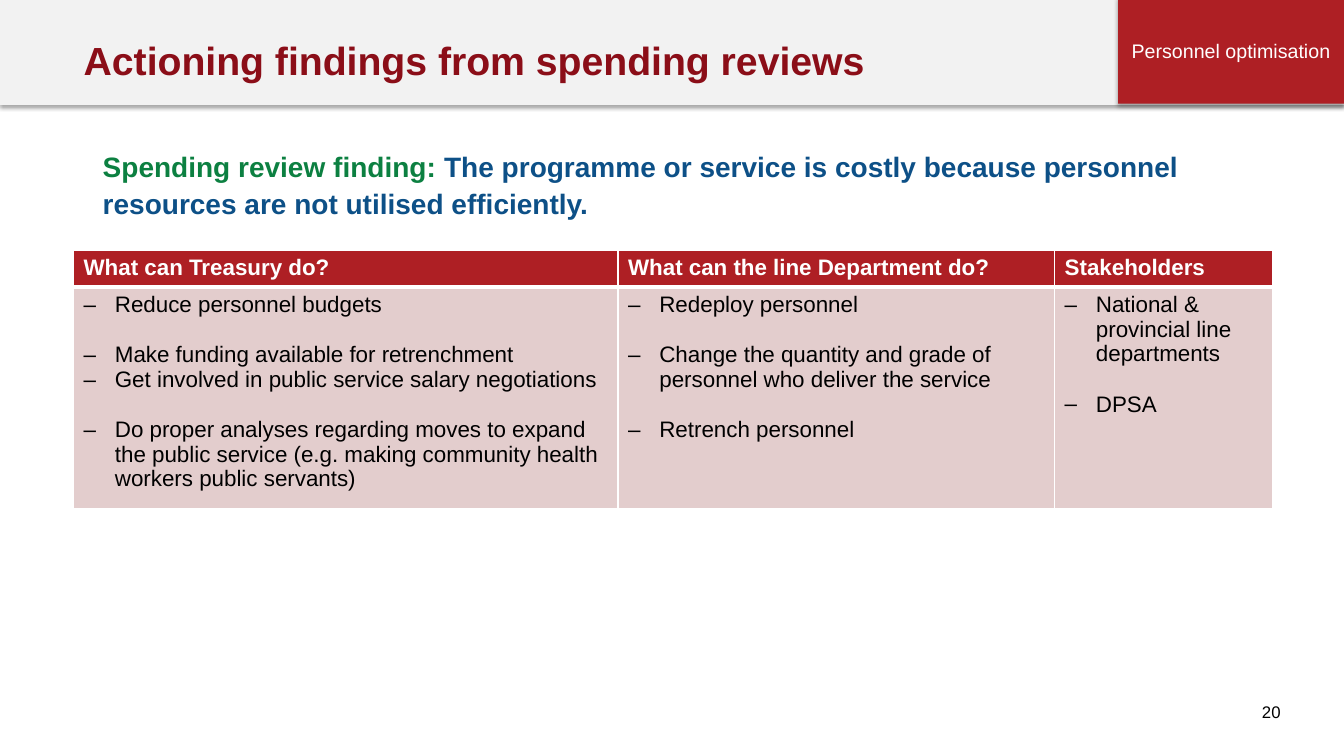
from dataclasses import dataclass

from lxml import etree
from pptx import Presentation
from pptx.dml.color import RGBColor
from pptx.enum.shapes import MSO_SHAPE
from pptx.enum.text import MSO_ANCHOR, PP_ALIGN
from pptx.oxml.ns import qn
from pptx.util import Inches, Pt

RECTANGLE = MSO_SHAPE.RECTANGLE
TOP, MIDDLE = MSO_ANCHOR.TOP, MSO_ANCHOR.MIDDLE
LEFT, CENTER, RIGHT = PP_ALIGN.LEFT, PP_ALIGN.CENTER, PP_ALIGN.RIGHT

WHITE = RGBColor(0xFF, 0xFF, 0xFF)
BLACK = RGBColor(0, 0, 0)
GREY = RGBColor(0xF2, 0xF2, 0xF2)
RED = RGBColor(0xAE, 0x1F, 0x24)
DARK_RED = RGBColor(0x8B, 0x0E, 0x18)
PINK = RGBColor(0xE3, 0xCD, 0xCD)
GREEN = RGBColor(0x0C, 0x80, 0x41)
BLUE = RGBColor(0x0D, 0x50, 0x87)

FONT = "Arial"
HEADER_HEIGHT, ACTIONS_HEIGHT = 0.33, 2.11
BULLET_INDENT = Inches(0.31)
BULLET_GAP = Pt(18)


@dataclass(frozen=True)
class Action:
    text: str
    gap_before: bool = True


@dataclass(frozen=True)
class ActionColumn:
    heading: str
    width: float
    actions: tuple[Action, ...]


COLUMNS = (
    ActionColumn("What can Treasury do?", 5.4, (
        Action("Reduce personnel budgets", False),
        Action("Make funding available for retrenchment"),
        Action("Get involved in public service salary negotiations", False),
        Action("Do proper analyses regarding moves to expand the public service "
               "(e.g. making community health workers public servants)"),
    )),
    ActionColumn("What can the line Department do?", 4.33, (
        Action("Redeploy personnel", False),
        Action("Change the quantity and grade of personnel who deliver the service"),
        Action("Retrench personnel"),
    )),
    ActionColumn("Stakeholders", 2.16, (
        Action("National & provincial line departments", False),
        Action("DPSA"),
    )),
)


def add_text(paragraph, text: str, *, size: float, color: RGBColor,
             bold: bool = False, align: PP_ALIGN = LEFT) -> None:
    paragraph.alignment = align
    run = paragraph.add_run()
    run.text = text
    run.font.name = FONT
    run.font.size = Pt(size)
    run.font.bold = bold
    run.font.color.rgb = color


def add_frame(slide, left: float, top: float, width: float, height: float):
    box = slide.shapes.add_textbox(Inches(left), Inches(top), Inches(width), Inches(height))
    box.text_frame.word_wrap = True
    return box.text_frame


def add_band(slide, left: float, top: float, width: float, height: float, color: RGBColor):
    """Add a flat rectangle with a soft shadow below it."""
    band = slide.shapes.add_shape(
        RECTANGLE, Inches(left), Inches(top), Inches(width), Inches(height))
    band.fill.solid()
    band.fill.fore_color.rgb = color
    band.line.fill.background()
    band.shadow.inherit = False
    effects = band.element.spPr.find(qn("a:effectLst"))
    shadow = etree.SubElement(effects, qn("a:outerShdw"), blurRad=str(Pt(3.1)),
                              dist=str(Pt(1.8)), dir="5400000", rotWithShape="0")
    shade = etree.SubElement(shadow, qn("a:srgbClr"), val=str(BLACK))
    etree.SubElement(shade, qn("a:alpha"), val="35000")
    return band


def style_cell(cell, color: RGBColor, bottom_width: float) -> None:
    """Give the cell white borders and a solid fill."""
    properties = cell._tc.get_or_add_tcPr()
    for side, width in (("L", 1), ("R", 1), ("T", 1), ("B", bottom_width)):
        border = etree.SubElement(properties, qn(f"a:ln{side}"), w=str(Pt(width)))
        fill = etree.SubElement(border, qn("a:solidFill"))
        etree.SubElement(fill, qn("a:srgbClr"), val=str(WHITE))
    cell.fill.solid()
    cell.fill.fore_color.rgb = color


def add_action(paragraph, action: Action) -> None:
    properties = paragraph._p.get_or_add_pPr()
    properties.set("marL", str(BULLET_INDENT))
    properties.set("indent", str(-BULLET_INDENT))
    paragraph.space_before = BULLET_GAP if action.gap_before else Pt(0)
    etree.SubElement(properties, qn("a:buFont"), typeface=FONT)
    etree.SubElement(properties, qn("a:buChar"), char="–")
    add_text(paragraph, action.text, size=16, color=BLACK)


def add_actions_table(slide) -> None:
    width = sum(column.width for column in COLUMNS)
    table = slide.shapes.add_table(
        2, len(COLUMNS), Inches(0.73), Inches(2.48), Inches(width),
        Inches(HEADER_HEIGHT + ACTIONS_HEIGHT)).table
    table.rows[0].height = Inches(HEADER_HEIGHT)
    table.rows[1].height = Inches(ACTIONS_HEIGHT)
    for index, column in enumerate(COLUMNS):
        table.columns[index].width = Inches(column.width)
        heading, body = table.cell(0, index), table.cell(1, index)
        style_cell(heading, RED, 3)
        style_cell(body, PINK, 1)
        add_text(heading.text_frame.paragraphs[0], column.heading,
                 size=16, color=WHITE, bold=True)
        for number, action in enumerate(column.actions):
            frame = body.text_frame
            paragraph = frame.add_paragraph() if number else frame.paragraphs[0]
            add_action(paragraph, action)


def add_header(slide) -> None:
    add_band(slide, 0, 0, 13.33, 1.04, GREY)
    topic = add_band(slide, 11.09, -0.03, 2.24, 1.06, RED)
    topic.text_frame.word_wrap = True
    topic.text_frame.vertical_anchor = MIDDLE
    add_text(topic.text_frame.paragraphs[0], "Personnel optimisation",
             size=14, color=WHITE, align=CENTER)

    title = slide.shapes.title
    topic.element.addnext(title.element)
    title.left, title.top = Inches(0.73), Inches(0.37)
    title.width, title.height = Inches(8.12), Inches(0.45)
    title.text_frame.vertical_anchor = MIDDLE
    add_text(title.text_frame.paragraphs[0], "Actioning findings from spending reviews",
             size=28, color=DARK_RED, bold=True)


def add_finding(slide) -> None:
    frame = add_frame(slide, 0.92, 1.4, 11.51, 0.85)
    frame.vertical_anchor = TOP
    finding = frame.paragraphs[0]
    finding.line_spacing = 1.1
    add_text(finding, "Spending review finding: ", size=20, color=GREEN, bold=True)
    add_text(finding, "The programme or service is costly because personnel resources "
             "are not utilised efficiently.", size=20, color=BLUE, bold=True)


def main() -> None:
    presentation = Presentation()
    presentation.slide_width = Inches(13.33)
    presentation.slide_height = Inches(7.5)
    slide = presentation.slides.add_slide(presentation.slide_layouts.get_by_name("Title Only"))
    add_header(slide)
    add_finding(slide)
    add_actions_table(slide)
    page_number = add_frame(slide, 12.04, 6.91, 0.76, 0.39)
    add_text(page_number.paragraphs[0], "20", size=12, color=BLACK, align=RIGHT)
    presentation.save("out.pptx")


if __name__ == "__main__":
    main()
